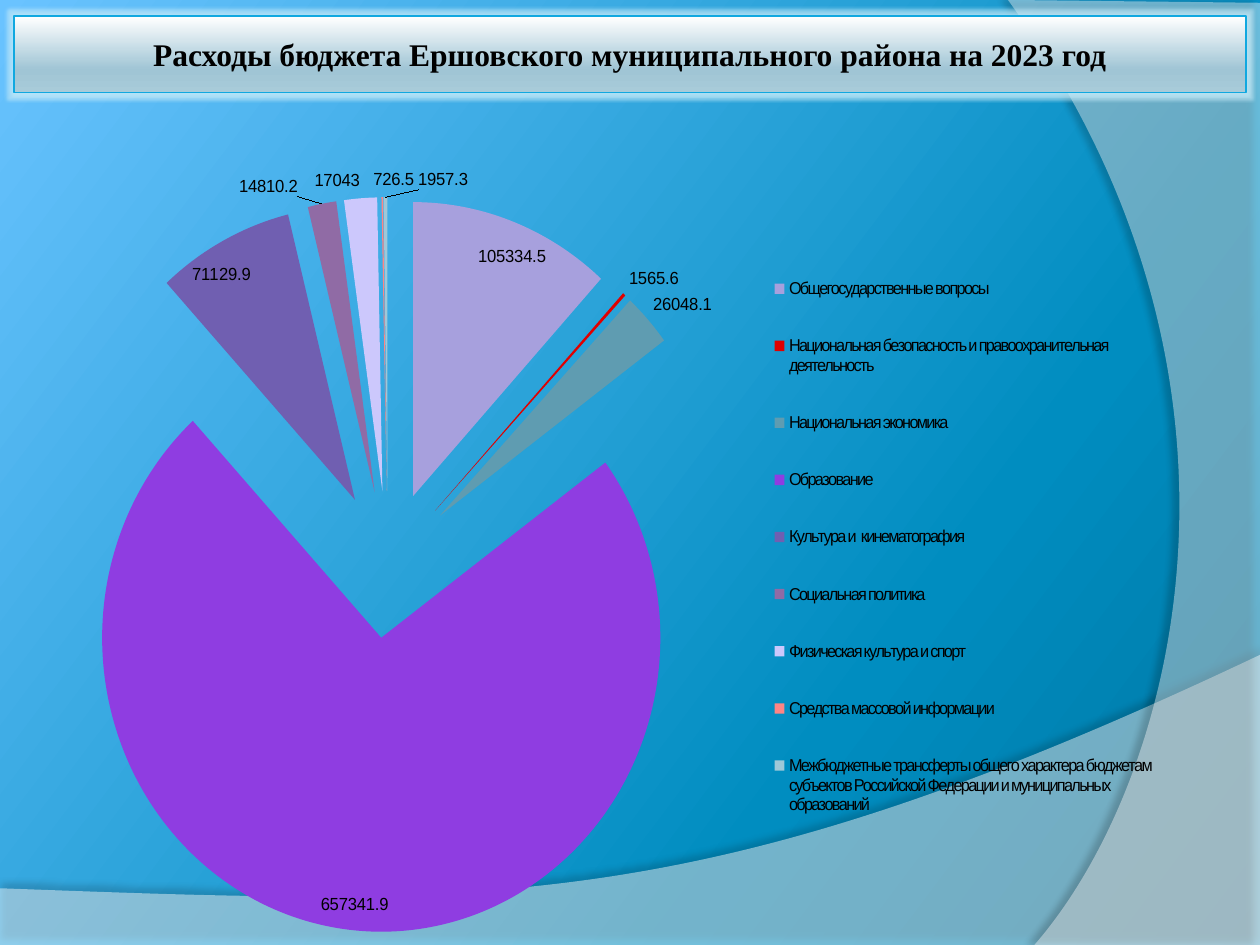
from lxml.etree import SubElement
from pptx import Presentation
from pptx.chart.data import CategoryChartData
from pptx.dml.color import RGBColor
from pptx.enum.chart import XL_CHART_TYPE as ChartType
from pptx.enum.chart import XL_LABEL_POSITION as LabelPosition
from pptx.enum.chart import XL_LEGEND_POSITION as LegendPosition
from pptx.enum.shapes import MSO_SHAPE as Preset
from pptx.enum.text import MSO_ANCHOR as Anchor
from pptx.enum.text import PP_ALIGN as Align
from pptx.oxml.ns import qn
from pptx.util import Inches, Pt

THEME = {
    "background": [(0, "0076A1"), (30, "008DC0"), (100, "6AC3FF")],
    "banner": [(0, "FFFFFF"), (70, "A0C5D5"), (100, "A8CBD9")],
    "banner_line": "10A8E0",
    "glow": "C4EAF8",
    "text": "000000",
    "wave": "FFFFFF",
    "title_font": "Times New Roman",
    "chart_font": "Arial",
    "title_size": Pt(18),
    "label_size": Pt(10),
    "legend_size": Pt(9.8),
}
INSIDE, OUTSIDE = LabelPosition.INSIDE_END, LabelPosition.OUTSIDE_END

# Category, value, colour, label position, label shift in shares of the chart
EXPENSES = [
    ("Общегосударственные вопросы", 105334.5, "A7A0DD", INSIDE, (0.03, 0.02)),
    ("Национальная безопасность и правоохранительная деятельность",
     1565.6, "E00000", OUTSIDE, None),
    ("Национальная экономика", 26048.1, "5F9CB1", OUTSIDE, None),
    ("Образование", 657341.9, "8F3DE1", INSIDE, (-0.03, -0.01)),
    ("Культура и  кинематография", 71129.9, "705FB1", INSIDE, (-0.03, 0.02)),
    ("Социальная политика", 14810.2, "906BA5", OUTSIDE, (-0.02, 0)),
    ("Физическая культура и спорт", 17043, "CCC8FC", OUTSIDE, (-0.02, 0)),
    ("Средства массовой информации", 726.5, "FF8585", OUTSIDE, (0.01, 0)),
    ("Межбюджетные трансферты общего характера бюджетам субъектов "
     "Российской Федерации и муниципальных образований",
     1957.3, "9FC8D8", OUTSIDE, (0.05, 0)),
]

# Waves in thousandths of the slide: corners, control points of the curve
# back to the first corner, opacity, shadow opacity, shadow direction
WAVES = [
    ([(0, 940), (0, 1000), (1000, 1000), (1000, 693)],
     [(559, 972), (391, 959)], 45, 35, 270),
    ([(800, 0), (1000, 3), (1000, 1000), (821, 1000)],
     [(935, 825), (1018, 400)], 40, 45, 180),
]


def set_gradient(fill, element, stops, angle):
    """Fill with any number of (percent, colour) stops."""
    fill.gradient()
    fill.gradient_angle = angle
    stop_list = next(element.iter(qn("a:gsLst")))
    for stop in list(stop_list):
        stop_list.remove(stop)
    for percent, color in stops:
        stop = SubElement(stop_list, qn("a:gs"), pos=str(percent * 1000))
        SubElement(stop, qn("a:srgbClr"), val=color)


def set_layout(parent, index, **shares):
    """Put a manual layout, given as shares of the chart, at a child index."""
    for layout in parent.findall(qn("c:layout")):
        parent.remove(layout)
    layout = parent.makeelement(qn("c:layout"), {})
    parent.insert(index, layout)
    manual = SubElement(layout, qn("c:manualLayout"))
    for name, value in shares.items():
        SubElement(manual, qn(f"c:{name}"), val=str(value))


presentation = Presentation()
width = presentation.slide_width = Inches(10)
height = presentation.slide_height = Inches(7.5)
slide = presentation.slides.add_slide(presentation.slide_layouts[6])
set_gradient(slide.background.fill, slide.element, THEME["background"], 143)

for corners, controls, opacity, shadow_opacity, direction in WAVES:
    builder = slide.shapes.build_freeform(
        *corners[0], scale=(width / 1000, height / 1000))
    builder.add_line_segments(corners[1:], close=True)
    wave = builder.convert_to_shape()
    left = min(x for x, _ in corners)
    top = min(y for _, y in corners)
    curve = wave.element.makeelement(qn("a:cubicBezTo"), {})
    for x, y in controls + corners[:1]:
        SubElement(curve, qn("a:pt"), x=str(x - left), y=str(y - top))
    next(wave.element.iter(qn("a:close"))).addprevious(curve)

    wave.fill.solid()
    wave.fill.fore_color.rgb = RGBColor.from_string(THEME["wave"])
    wave.line.fill.background()
    wave.shadow.inherit = False
    color = next(wave.element.spPr.iter(qn("a:srgbClr")))
    SubElement(color, qn("a:alpha"), val=str(opacity * 1000))
    shadow = SubElement(
        wave.element.spPr.find(qn("a:effectLst")), qn("a:outerShdw"),
        blurRad=str(Pt(4)), dist=str(Pt(4)), dir=str(direction * 60000))
    color = SubElement(shadow, qn("a:srgbClr"), val="000000")
    SubElement(color, qn("a:alpha"), val=str(shadow_opacity * 1000))

banner = slide.shapes.add_shape(
    Preset.RECTANGLE, int(width * 0.011), int(height * 0.017),
    int(width * 0.978), int(height * 0.081))
set_gradient(banner.fill, banner.element, THEME["banner"], 270)
banner.line.color.rgb = RGBColor.from_string(THEME["banner_line"])
banner.line.width = Pt(1)
banner.shadow.inherit = False
glow = SubElement(banner.element.spPr.find(qn("a:effectLst")),
                  qn("a:glow"), rad=str(Pt(2.5)))
color = SubElement(glow, qn("a:srgbClr"), val=THEME["glow"])
SubElement(color, qn("a:alpha"), val="60000")
frame = banner.text_frame
frame.word_wrap = True
frame.vertical_anchor = Anchor.MIDDLE
paragraph = frame.paragraphs[0]
paragraph.text = "Расходы бюджета Ершовского муниципального района на 2023 год"
paragraph.alignment = Align.CENTER
paragraph.font.name = THEME["title_font"]
paragraph.font.size = THEME["title_size"]
paragraph.font.bold = True
paragraph.font.color.rgb = RGBColor.from_string(THEME["text"])

chart_data = CategoryChartData()
chart_data.categories = [expense[0] for expense in EXPENSES]
chart_data.add_series("Series 1", [expense[1] for expense in EXPENSES])
chart = slide.shapes.add_chart(
    ChartType.PIE, int(width * 0.016), int(height * 0.115),
    int(width * 0.961), int(height * 0.937), chart_data).chart
chart.has_title = False
chart.font.name = THEME["chart_font"]
chart.font.size = THEME["label_size"]
chart.font.color.rgb = RGBColor.from_string(THEME["text"])

plot_area = next(chart.element.iter(qn("c:plotArea")))
set_layout(plot_area, 0, layoutTarget="inner", xMode="edge", yMode="edge",
           x=0.01, y=0.1, w=0.62, h=0.83)

plot = chart.plots[0]
plot.vary_by_categories = True
plot.has_data_labels = True
plot.data_labels.show_value = True
plot.data_labels.show_percentage = False
series = plot.series[0]
for index, (_, _, fill_color, position, _) in enumerate(EXPENSES):
    point = series.points[index]
    point.format.fill.solid()
    point.format.fill.fore_color.rgb = RGBColor.from_string(fill_color)
    point.format.line.fill.background()
    label = point.data_label
    label.font.size = THEME["label_size"]
    label.font.name = THEME["chart_font"]
    label.font.color.rgb = RGBColor.from_string(THEME["text"])
    label.position = position
for label, (*_, shift) in zip(plot_area.iter(qn("c:dLbl")), EXPENSES):
    if shift:
        set_layout(label, 1, x=shift[0], y=shift[1])
explosion = plot_area.makeelement(qn("c:explosion"), {"val": "25"})
next(plot_area.iter(qn("c:dPt"))).addprevious(explosion)

chart.has_legend = True
legend = chart.legend
legend.position = LegendPosition.RIGHT
legend.include_in_layout = False
legend.font.name = THEME["chart_font"]
legend.font.size = THEME["legend_size"]
legend.font.color.rgb = RGBColor.from_string(THEME["text"])
legend_element = next(chart.element.iter(qn("c:legend")))
next(legend_element.iter(qn("a:defRPr"))).set("spc", "-100")
set_layout(legend_element, 1, xMode="edge", yMode="edge",
           x=0.65, y=0.15, w=0.34, h=0.69)

presentation.save("out.pptx")
